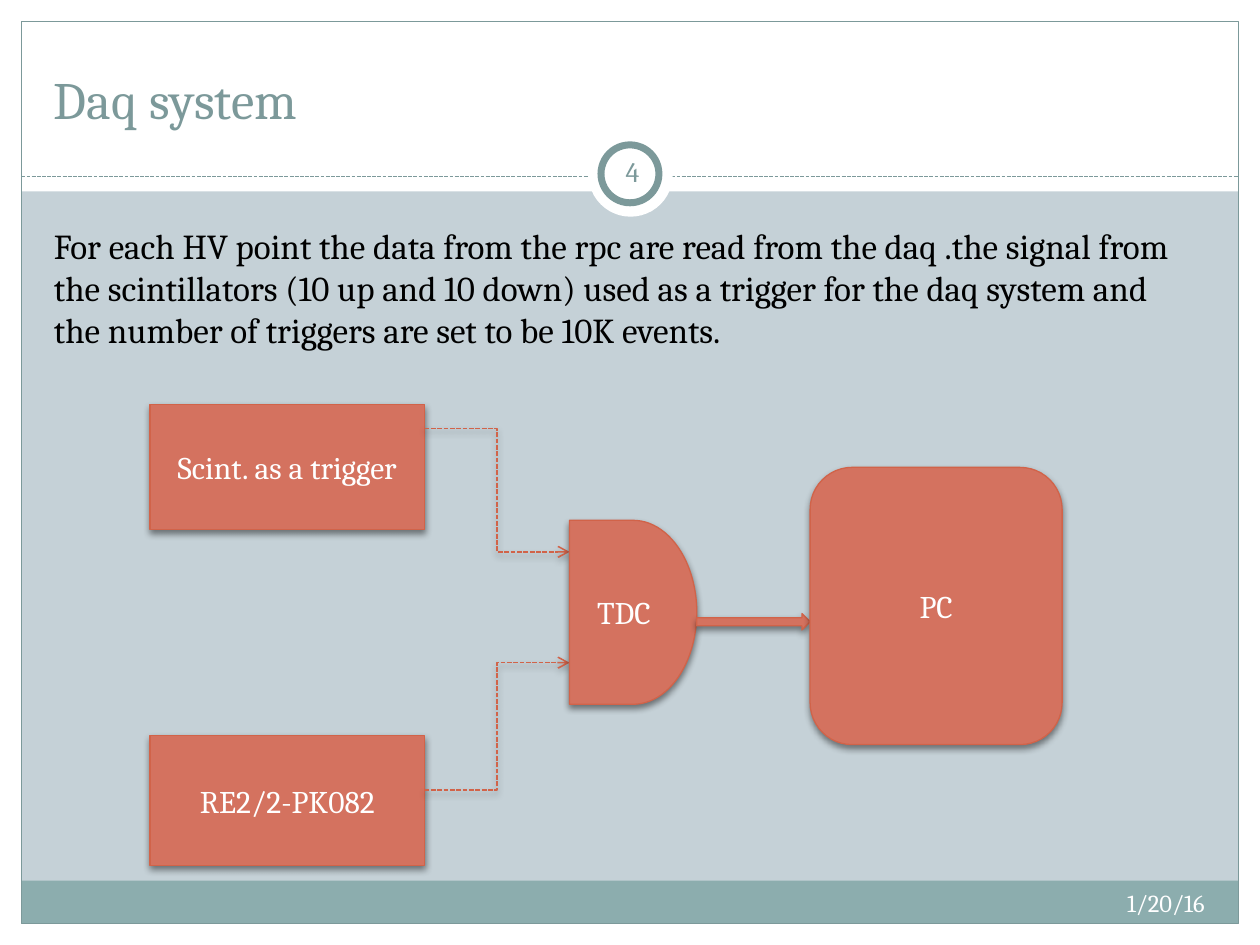
from dataclasses import dataclass

from lxml.etree import SubElement
from pptx import Presentation
from pptx.dml.color import RGBColor as Rgb
from pptx.enum.dml import MSO_LINE_DASH_STYLE as Dash
from pptx.enum.shapes import MSO_CONNECTOR_TYPE as Link, MSO_SHAPE as Form
from pptx.enum.text import MSO_ANCHOR as Anchor, PP_ALIGN as Align
from pptx.oxml.ns import qn
from pptx.util import Inches, Pt


@dataclass(frozen=True)
class Theme:
    font: str = "Cambria"
    backdrop: str = "C5D1D7"
    white: str = "FFFFFF"
    black: str = "000000"
    slate: str = "7C999A"
    footer: str = "8CADAE"
    coral: str = "D4725F"
    edge: str = "D16349"
    title: int = 30
    body: int = 20
    label: int = 18
    number: int = 16
    date: int = 14
    thin: float = 0.75
    wire: float = 0.9
    ring: float = 4


class Board:
    COLUMNS, ROWS = 100, 75

    def __init__(self, deck, theme):
        self.theme = theme
        self.cell_w = deck.slide_width / self.COLUMNS
        self.cell_h = deck.slide_height / self.ROWS
        self.slide = deck.slides.add_slide(deck.slide_layouts[6])
        self.shapes = self.slide.shapes
        backdrop = self.slide.background.fill
        backdrop.solid()
        backdrop.fore_color.rgb = Rgb.from_string(theme.backdrop)

    def grid(self, *cells):
        sizes = (self.cell_w, self.cell_h)
        return [round(cell * sizes[i % 2]) for i, cell in enumerate(cells)]

    def effects(self, item, alpha=None):
        effects = SubElement(item._element.spPr, qn("a:effectLst"))
        if alpha is None:
            return
        shadow = SubElement(effects, qn("a:outerShdw"), blurRad=str(Pt(4)),
                            dist=str(Pt(2)), dir="5400000", rotWithShape="0")
        color = SubElement(shadow, qn("a:srgbClr"), val=self.theme.black)
        SubElement(color, qn("a:alpha"), val=str(alpha * 1000))

    def stroke(self, item, color, width, dash=None):
        item.line.color.rgb = Rgb.from_string(color)
        item.line.width = Pt(width)
        if dash:
            item.line.dash_style = dash

    def wording(self, frame, words, size, color, align, anchor):
        frame.word_wrap = True
        frame.vertical_anchor = anchor
        paragraph = frame.paragraphs[0]
        paragraph.alignment = align
        run = paragraph.add_run()
        run.text = words
        run.font.name = self.theme.font
        run.font.size = Pt(size)
        run.font.color.rgb = Rgb.from_string(color)

    def panel(self, cells, fill=None, line=None, width=0, form=Form.RECTANGLE, alpha=None):
        panel = self.shapes.add_shape(form, *self.grid(*cells))
        if fill:
            panel.fill.solid()
            panel.fill.fore_color.rgb = Rgb.from_string(fill)
        else:
            panel.fill.background()
        if line:
            self.stroke(panel, line, width)
        else:
            panel.line.fill.background()
        self.effects(panel, alpha)
        return panel

    def block(self, cells, form, words=None):
        theme = self.theme
        block = self.panel(cells, theme.coral, theme.edge, theme.thin, form, alpha=45)
        if words:
            self.wording(block.text_frame, words, theme.label, theme.white,
                         Align.CENTER, Anchor.MIDDLE)

    def text(self, cells, words, size, color, align=Align.LEFT, anchor=Anchor.TOP, inset=0.1):
        frame = self.shapes.add_textbox(*self.grid(*cells)).text_frame
        frame.margin_left = frame.margin_right = Inches(inset)
        self.wording(frame, words, size, color, align, anchor)

    def rule(self, *cells):
        rule = self.shapes.add_connector(Link.STRAIGHT, *self.grid(*cells))
        self.stroke(rule, self.theme.slate, self.theme.thin, Dash.SQUARE_DOT)
        self.effects(rule)

    def wire(self, *cells):
        wire = self.shapes.add_connector(Link.ELBOW, *self.grid(*cells))
        self.stroke(wire, self.theme.edge, self.theme.wire, Dash.SQUARE_DOT)
        SubElement(wire._element.spPr.find(qn("a:ln")), qn("a:tailEnd"), type="arrow")
        self.effects(wire, alpha=35)


def main():
    deck = Presentation()
    deck.slide_width, deck.slide_height = Inches(10), Inches(7.5)
    theme = Theme()
    board = Board(deck, theme)

    margin = 1.7
    right, bottom = board.COLUMNS - margin, board.ROWS - margin
    inner = right - margin
    for border in ((0, bottom, board.COLUMNS, margin), (0, 0, board.COLUMNS, 15.2),
                   (0, 0, margin, board.ROWS), (right, 0, margin, board.ROWS)):
        board.panel(border, theme.white)
    board.panel((margin, 69.9, inner, 3.4), theme.footer)
    board.panel((margin, margin, inner, bottom - margin), line=theme.slate, width=theme.thin)
    board.rule(margin, 14, right, 14)
    board.panel((46.7, 10.5, 6.7, 6.7), theme.white, form=Form.OVAL)
    board.panel((47.7, 11.5, 4.6, 4.6), theme.white, theme.slate, theme.ring, Form.OVAL)

    board.text((3.3, 2.5, 93.3, 8.3), "Daq system", theme.title, theme.slate,
               anchor=Anchor.BOTTOM)
    board.text((63.3, 70, 33.3, 4), "1/20/16", theme.date, theme.white, Align.RIGHT)
    board.text((47.7, 11.2, 5, 4.8), "4", theme.number, theme.slate,
               Align.CENTER, Anchor.MIDDLE, inset=0.05)
    board.text((3.3, 17.3, 93, 53),
               "For each HV point the data from the rpc are read from the daq .the signal "
               "from the scintillators (10 up and 10 down) used as a trigger for the daq "
               "system and the number of triggers are set to be 10K events.",
               theme.body, theme.black)

    source_x, source_w, tdc_x, tdc_w, pc_x = 11.9, 21.8, 45.2, 10.1, 64.3
    tdc_end = tdc_x + tdc_w
    board.block((source_x, 32.1, source_w, 9.9), Form.RECTANGLE, "Scint. as a trigger")
    board.block((source_x, 58.4, source_w, 10.3), Form.RECTANGLE, "RE2/2-PK082")
    for source_y, tdc_y in ((34, 43.8), (62.7, 52.6)):
        board.wire(source_x + source_w, source_y, tdc_x, tdc_y)
    board.block((tdc_x, 41.3, tdc_w, 14.6), Form.FLOWCHART_DELAY, "TDC")
    board.block((tdc_end, 48.7, pc_x - tdc_end, 1.3), Form.RIGHT_ARROW)
    board.block((pc_x, 37.1, 20, 22), Form.ROUNDED_RECTANGLE, "PC")

    deck.save("out.pptx")


if __name__ == "__main__":
    main()
